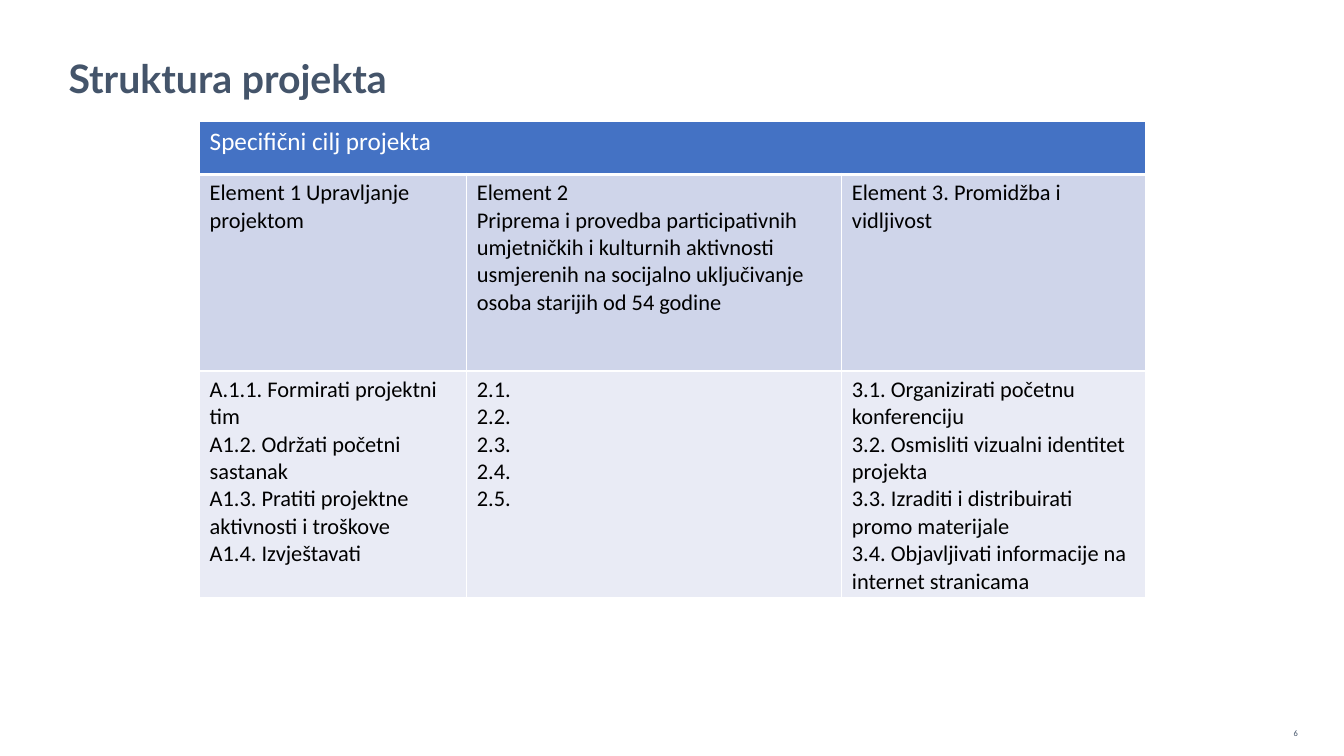
from lxml import etree
from pptx import Presentation
from pptx.dml.color import RGBColor
from pptx.enum.text import MSO_ANCHOR as Anchor, MSO_AUTO_SIZE as AutoSize, PP_ALIGN as Align
from pptx.oxml.ns import qn
from pptx.util import Inches, Pt

WIDTH, HEIGHT = 13.33, 7.5
SLATE, WHITE, BLACK = "44546A", "FFFFFF", "000000"
COLUMNS = [2.65, 3.72, 3.01]
ROWS = [0.53, 1.95, 2.25]
ROW_FILLS = ["4472C4", "CFD5EA", "E9EBF5"]

GOAL = "Specifični cilj projekta"
ELEMENTS = [
    ["Element 1 Upravljanje projektom"],
    ["Element 2",
     "Priprema i provedba participativnih umjetničkih i kulturnih aktivnosti "
     "usmjerenih na socijalno uključivanje osoba starijih od 54 godine"],
    ["Element 3. Promidžba i vidljivost"],
]
ACTIVITIES = [
    ["A.1.1. Formirati projektni tim",
     "A1.2. Održati početni sastanak",
     "A1.3. Pratiti projektne aktivnosti i troškove",
     "A1.4. Izvještavati"],
    [f"2.{number}." for number in range(1, 6)],
    ["3.1. Organizirati početnu konferenciju",
     "3.2. Osmisliti vizualni identitet projekta",
     "3.3. Izraditi i distribuirati promo materijale",
     "3.4. Objavljivati informacije na internet stranicama"],
]


def color(hex_value):
    return RGBColor.from_string(hex_value)


def write(frame, lines, size, ink=BLACK, font="Calibri", bold=False,
          align=Align.LEFT, anchor=Anchor.TOP, spacing=1.0):
    """Fill a text frame, one paragraph per line."""
    frame.word_wrap = True
    frame.vertical_anchor = anchor
    for index, line in enumerate(lines):
        paragraph = frame.add_paragraph() if index else frame.paragraphs[0]
        paragraph.alignment = align
        paragraph.line_spacing = spacing
        run = paragraph.add_run()
        run.text = line
        run.font.name, run.font.size, run.font.bold = font, Pt(size), bold
        run.font.color.rgb = color(ink)


def style_cell(cell, fill, bottom_width=1):
    """Set the fill and the white borders of a table cell."""
    cell.fill.solid()
    cell.fill.fore_color.rgb = color(fill)
    properties = cell._tc.get_or_add_tcPr()
    for index, side in enumerate(["lnL", "lnR", "lnT", "lnB"]):
        width = bottom_width if side == "lnB" else 1
        line = etree.Element(qn(f"a:{side}"), w=str(Pt(width)))
        solid = etree.SubElement(line, qn("a:solidFill"))
        etree.SubElement(solid, qn("a:srgbClr"), val=WHITE)
        properties.insert(index, line)


def add_title(slide, text):
    title = slide.shapes.title
    title.left, title.top = Inches(0.58), Inches(0.22)
    title.width, title.height = Inches(10.92), Inches(1.17)
    title.text_frame.auto_size = AutoSize.NONE
    write(title.text_frame, [text], 28, SLATE, font="Lato", bold=True,
          anchor=Anchor.MIDDLE, spacing=0.9)


def add_structure(slide):
    frame = slide.shapes.add_table(
        len(ROWS), len(COLUMNS), Inches(1.98), Inches(1.2),
        Inches(sum(COLUMNS)), Inches(sum(ROWS)))
    table = frame.table
    for column, width in zip(table.columns, COLUMNS):
        column.width = Inches(width)
    for row, height, fill in zip(table.rows, ROWS, ROW_FILLS):
        row.height = Inches(height)
        for cell in row.cells:
            style_cell(cell, fill, bottom_width=3 if fill == ROW_FILLS[0] else 1)

    # Goal across all columns
    goal = table.cell(0, 0)
    goal.merge(table.cell(0, len(COLUMNS) - 1))
    write(goal.text_frame, [GOAL], 18, WHITE)

    # Elements and their activities
    for row, contents in enumerate([ELEMENTS, ACTIVITIES], start=1):
        for column, lines in enumerate(contents):
            write(table.cell(row, column).text_frame, lines, 16)


def add_page_number(slide, number):
    box = slide.shapes.add_textbox(Inches(12.13), Inches(7.17), Inches(0.84), Inches(0.2))
    write(box.text_frame, [number], 6, SLATE, align=Align.RIGHT)


def main():
    deck = Presentation()
    deck.slide_width, deck.slide_height = Inches(WIDTH), Inches(HEIGHT)
    slide = deck.slides.add_slide(deck.slide_layouts[5])
    add_page_number(slide, "6")
    add_title(slide, "Struktura projekta")
    add_structure(slide)
    deck.save("out.pptx")


if __name__ == "__main__":
    main()
